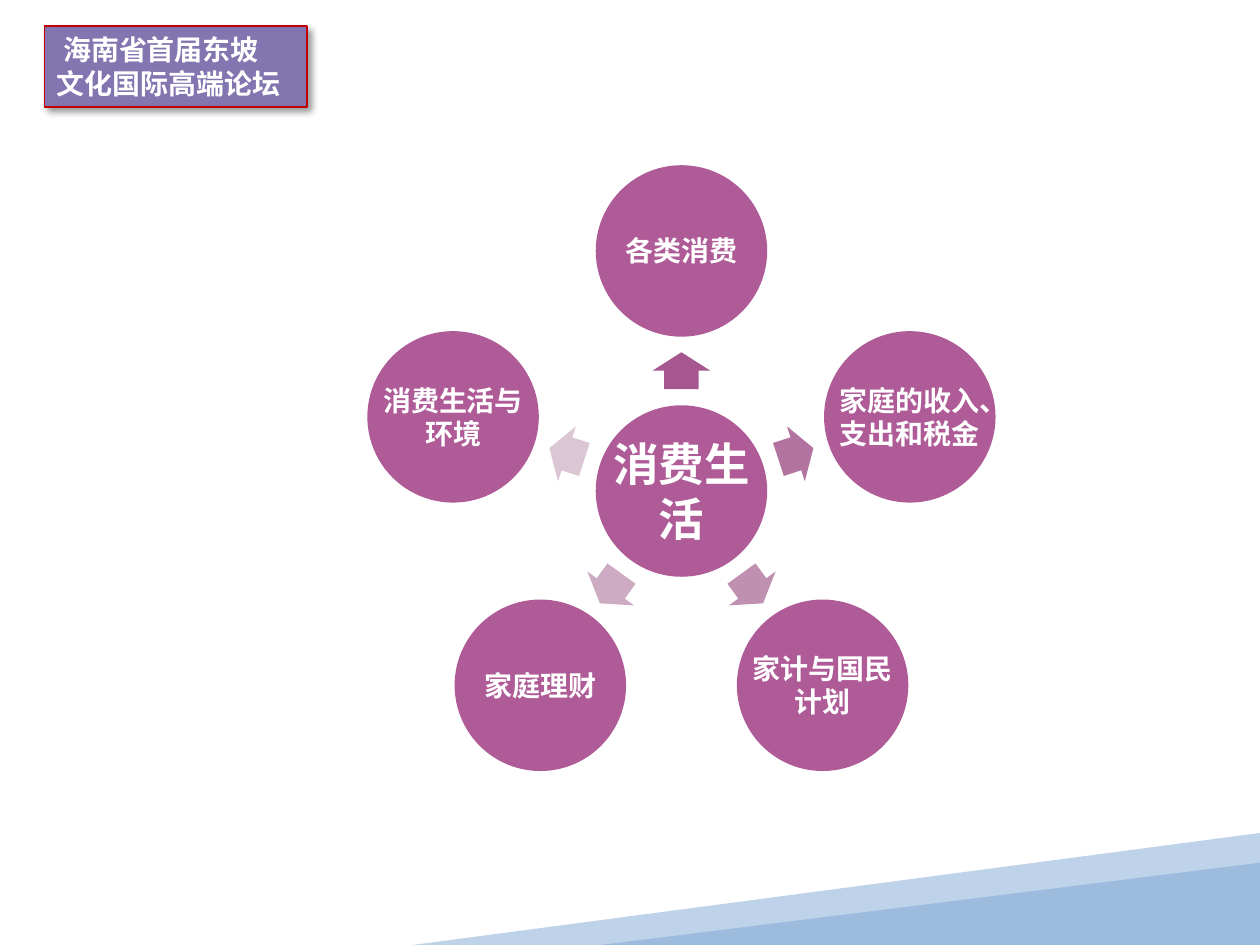
import math
from dataclasses import dataclass

import lxml.etree
import pptx
import pptx.util
from pptx.dml.color import RGBColor
from pptx.enum.shapes import MSO_SHAPE
from pptx.enum.text import MSO_ANCHOR, PP_ALIGN
from pptx.oxml.ns import qn

Pt = pptx.util.Pt

FONT = "Noto Sans CJK SC"
WHITE = RGBColor(0xFF, 0xFF, 0xFF)
PLUM = RGBColor(0xAE, 0x5B, 0x97)
VIOLET = RGBColor(0x83, 0x76, 0xB0)
RED = RGBColor(0xC0, 0x00, 0x00)
PALE = RGBColor(0xBE, 0xD2, 0xE9)
BLUE = RGBColor(0x9D, 0xBC, 0xDD)

HUB_X, HUB_Y = 389.4, 280.6
DIAM = 98
RING = 137.2  # hub centre to topic centre
MID = 68.8  # hub centre to arrow centre


@dataclass
class Topic:
    text: str
    tint: RGBColor  # colour of the arrow that leads to it


# Clockwise from the top
TOPICS = [
    Topic("各类消费", RGBColor(0xA6, 0x57, 0x90)),
    Topic("家庭的收入、支出和税金", RGBColor(0xB3, 0x73, 0xA0)),
    Topic("家计与国民计划", RGBColor(0xC0, 0x90, 0xB1)),
    Topic("家庭理财", RGBColor(0xCD, 0xAB, 0xC2)),
    Topic("消费生活与环境", RGBColor(0xDB, 0xC6, 0xD4)),
]


def paint(shape, fill: RGBColor) -> None:
    shape.shadow.inherit = False
    shape.fill.solid()
    shape.fill.fore_color.rgb = fill
    shape.line.fill.background()


def add_shape(slide, kind, x: float, y: float, w: float, h: float, fill: RGBColor):
    shape = slide.shapes.add_shape(kind, Pt(x), Pt(y), Pt(w), Pt(h))
    paint(shape, fill)
    return shape


def write(frame, lines: list[str], size: float, align, inset: tuple[float, float]) -> None:
    frame.word_wrap = True
    frame.vertical_anchor = MSO_ANCHOR.MIDDLE
    frame.margin_left = frame.margin_right = Pt(inset[0])
    frame.margin_top = frame.margin_bottom = Pt(inset[1])
    for i, line in enumerate(lines):
        para = frame.add_paragraph() if i else frame.paragraphs[0]
        para.alignment = align
        para.line_spacing = Pt(round(size * 1.19))
        run = para.add_run()
        run.text = line
        run.font.size = Pt(size)
        run.font.bold = True
        run.font.name = FONT
        run.font.color.rgb = WHITE
        props = run.font._element
        lxml.etree.SubElement(props, qn("a:ea")).set("typeface", FONT)


def add_disc(slide, x: float, y: float, text: str, size: float, inset: float) -> None:
    left, top = x - DIAM / 2, y - DIAM / 2
    add_shape(slide, MSO_SHAPE.OVAL, left, top, DIAM, DIAM, PLUM)
    box = slide.shapes.add_textbox(Pt(left), Pt(top), Pt(DIAM), Pt(DIAM))
    write(box.text_frame, [text], size, PP_ALIGN.CENTER, (inset, inset))


def add_arrow(slide, angle: float, tint: RGBColor) -> None:
    w, h = 21, 33
    x = HUB_X + MID * math.cos(math.radians(angle))
    y = HUB_Y + MID * math.sin(math.radians(angle))
    arrow = add_shape(slide, MSO_SHAPE.RIGHT_ARROW, x - w / 2, y - h / 2, w, h, tint)
    arrow.adjustments[0] = 0.6
    arrow.adjustments[1] = 0.5
    arrow.rotation = angle % 360


def add_shadow(shape) -> None:
    effects = shape._element.spPr.find(qn("a:effectLst"))
    outer = lxml.etree.SubElement(effects, qn("a:outerShdw"))
    outer.set("blurRad", str(Pt(4)))
    outer.set("dist", str(Pt(3)))
    outer.set("dir", str(45 * 60000))
    black = lxml.etree.SubElement(outer, qn("a:srgbClr"))
    black.set("val", "000000")
    lxml.etree.SubElement(black, qn("a:alpha")).set("val", "40000")


def main() -> None:
    deck = pptx.Presentation()
    deck.slide_width, deck.slide_height = Pt(720), Pt(540)
    slide = deck.slides.add_slide(deck.slide_layouts[6])

    # Corner bands
    pen = slide.shapes.build_freeform(720, 476, scale=float(Pt(1)))
    pen.add_line_segments([(720, 536), (484.5, 540), (236, 540)], close=True)
    paint(pen.convert_to_shape(), PALE)
    wedge = add_shape(slide, MSO_SHAPE.ISOSCELES_TRIANGLE, 343.5, 493, 376.5, 47, BLUE)
    wedge.adjustments[0] = 1

    # Hub, arrows and topics
    add_disc(slide, HUB_X, HUB_Y, "消费生活", 26, 3)
    for i, topic in enumerate(TOPICS):
        angle = -90 + i * 360 / len(TOPICS)
        turn = math.radians(angle)
        add_arrow(slide, angle, topic.tint)
        add_disc(slide, HUB_X + RING * math.cos(turn), HUB_Y + RING * math.sin(turn),
                 topic.text, 16, 1.5)

    # Forum label
    label = add_shape(slide, MSO_SHAPE.RECTANGLE, 25.5, 15, 150, 46, VIOLET)
    label.line.color.rgb = RED
    label.line.width = Pt(1)
    add_shadow(label)
    write(label.text_frame, [" 海南省首届东坡", "文化国际高端论坛"], 16,
          PP_ALIGN.LEFT, (7.2, 3.6))

    deck.save("out.pptx")


if __name__ == "__main__":
    main()
